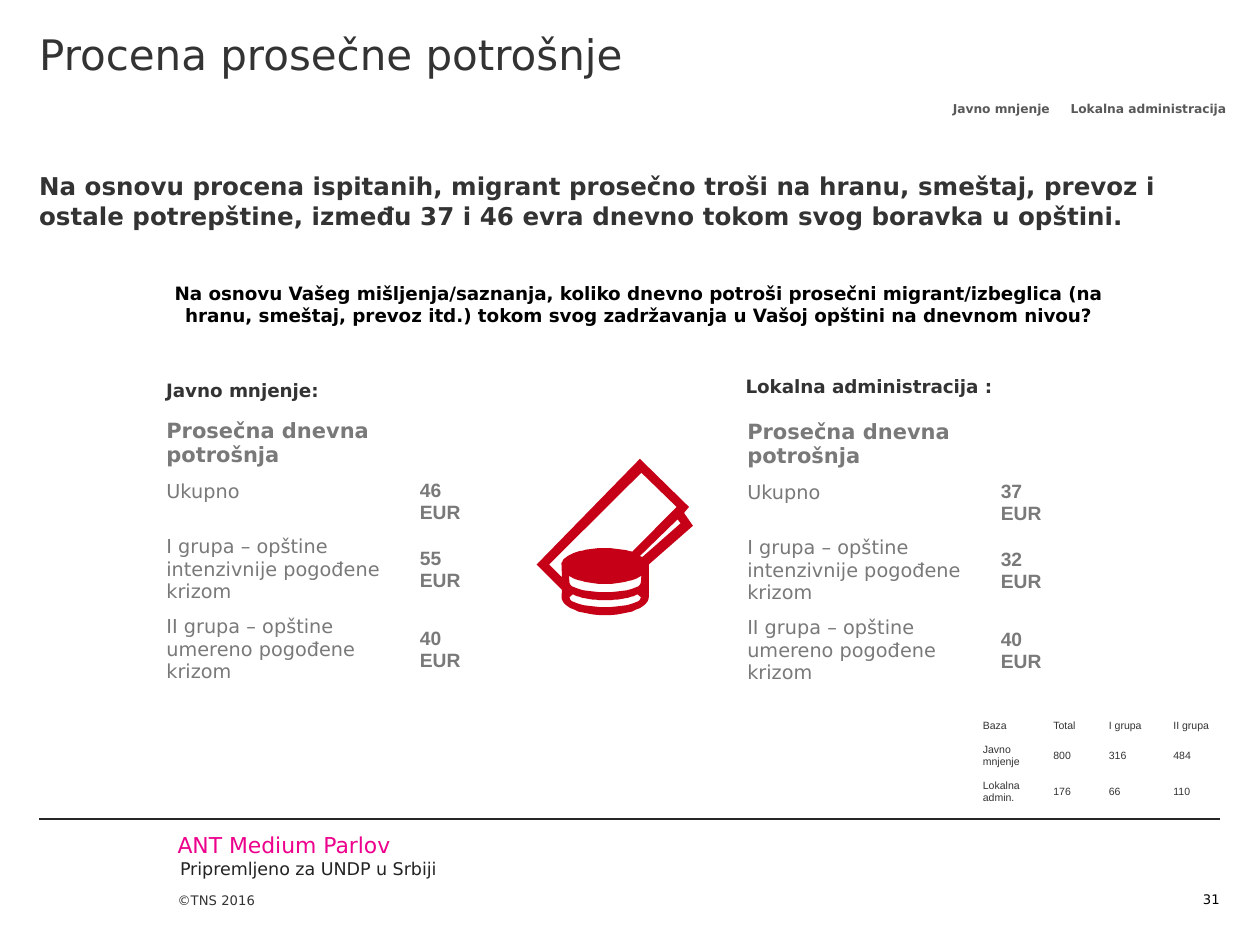
from math import cos, radians, sin

from pptx import Presentation
from pptx.dml.color import RGBColor
from pptx.enum.shapes import MSO_CONNECTOR
from pptx.enum.text import MSO_ANCHOR, MSO_AUTO_SIZE, PP_ALIGN
from pptx.oxml.ns import qn
from pptx.util import Cm, Pt

LEFT, CENTER, RIGHT = PP_ALIGN.LEFT, PP_ALIGN.CENTER, PP_ALIGN.RIGHT
TOP, MIDDLE, BOTTOM = MSO_ANCHOR.TOP, MSO_ANCHOR.MIDDLE, MSO_ANCHOR.BOTTOM
SANS, ARIAL = "DejaVu Sans", "Arial"
DARK, GREY, RED = "333333", "797979", "C50017"

# Insets: left, top, right, bottom in cm
PADDED = (0.25, 0.13, 0.25, 0.13)
FLUSH = (0, 0, 0, 0)
HEADER = (0, 0.58, 0, 0)

TITLE = ("Procena prosečne potrošnje", (0.79, 0, 23.8, 2.87),
         dict(size=24, color=DARK), dict(insets=HEADER))

# Text, box in cm, font, layout
TEXTS = [
    ("Na osnovu procena ispitanih, migrant prosečno troši na hranu, smeštaj, prevoz i "
     "ostale potrepštine, između 37 i 46 evra dnevno tokom svog boravka u opštini.",
     (0.79, 2.87, 23.8, 2.11), dict(size=14, color=DARK, bold=True), dict(insets=HEADER)),
    ("Na osnovu Vašeg mišljenja/saznanja, koliko dnevno potroši prosečni migrant/izbeglica "
     "(na hranu, smeštaj, prevoz itd.) tokom svog zadržavanja u Vašoj opštini na dnevnom nivou?",
     (2.62, 5.56, 20.52, 1.14), dict(size=10.5, color="000000", bold=True), dict(align=CENTER)),
    ("Javno mnjenje:", (3.1, 7.52, 4.62, 0.71),
     dict(size=10.5, color=DARK, bold=True), dict(anchor=MIDDLE)),
    ("Lokalna administracija :", (14.78, 7.44, 6.27, 0.71),
     dict(size=10.5, color=DARK, bold=True), dict(anchor=MIDDLE)),
    ("Javno mnjenje", (18.9, 1.91, 2.57, 0.56),
     dict(size=7, color="595959", bold=True), dict(align=CENTER, wrap=False)),
    ("Lokalna administracija", (21.31, 1.91, 3.68, 0.56),
     dict(size=7, color="595959", bold=True), dict(align=CENTER, wrap=False)),
    ("ANT Medium Parlov", (3.58, 16.76, 8.41, 0.53),
     dict(size=12.5, color="EC008C"), dict(insets=FLUSH)),
    ("Pripremljeno za UNDP u Srbiji", (3.63, 17.3, 17.3, 0.45),
     dict(size=10, color="232323"), dict(insets=FLUSH)),
    ("©TNS 2016", (3.58, 17.58, 2.11, 1.47),
     dict(size=7.5, color=DARK), dict(insets=(0, 0, 0, 0.74), anchor=BOTTOM)),
    ("31", (23.19, 17.58, 1.4, 0.71),
     dict(size=7.5, color="000000"), dict(insets=FLUSH, anchor=BOTTOM, align=RIGHT)),
]

SPENDING_TITLE = "Prosečna dnevna potrošnja"
SPENDING_GROUPS = ["Ukupno", "I grupa – opštine intenzivnije pogođene krizom",
                   "II grupa – opštine umereno pogođene krizom"]
SPENDING = [
    ((3.1, 8.31), ["46 EUR", "55 EUR", "40 EUR"]),
    ((14.81, 8.33), ["37 EUR", "32\nEUR", "40 EUR"]),
]
SPENDING_COLS, SPENDING_ROWS = [5.11, 1.78], [0.89, 1.04, 1.04, 1.04]

BASE = [
    ["Baza", "Total", "I grupa", "II grupa"],
    ["Javno mnjenje", "800", "316", "484"],
    ["Lokalna admin.", "176", "66", "110"],
]
BASE_AT, BASE_COLS, BASE_ROWS = (19.56, 14.38), [1.42, 1.12, 1.3, 1.42], [0.46, 0.66, 0.56]

FOOTER_LINE = (0.79, 16.51, 24.59)
MONEY_AT = (10.82, 9.25)


def rgb(value):
    return RGBColor.from_string(value)


def write(tf, text, size, color, bold=False, font=SANS, align=LEFT):
    for i, line in enumerate(text.split("\n")):
        p = tf.paragraphs[0] if i == 0 else tf.add_paragraph()
        p.alignment = align
        r = p.add_run()
        r.text = line
        for name, value in dict(name=font, size=Pt(size), bold=bold).items():
            setattr(r.font, name, value)
        r.font.color.rgb = rgb(color)


def fill_box(sp, text, box, font, insets=PADDED, anchor=TOP, align=LEFT, wrap=True):
    sp.left, sp.top, sp.width, sp.height = map(Cm, box)
    tf = sp.text_frame
    sides = ("margin_left", "margin_top", "margin_right", "margin_bottom")
    settings = dict(zip(sides, map(Cm, insets)), vertical_anchor=anchor,
                    word_wrap=wrap, auto_size=MSO_AUTO_SIZE.NONE)
    for name, value in settings.items():
        setattr(tf, name, value)
    write(tf, text, align=align, **font)


def add_plain_table(slide, at, cols, rows):
    """Add a table without banding or cell fills."""
    size = (sum(cols), sum(rows))
    table = slide.shapes.add_table(len(rows), len(cols), *map(Cm, at + size)).table
    table.first_row = table.horz_banding = False
    for col, width in zip(table.columns, cols):
        col.width = Cm(width)
    for row, height in zip(table.rows, rows):
        row.height = Cm(height)
    for cell in table.iter_cells():
        cell.fill.background()
    return table


def write_cell(cell, text, anchor=TOP, **font):
    cell.vertical_anchor = anchor
    write(cell.text_frame, text, **font)


def add_spending(slide, at, amounts):
    table = add_plain_table(slide, at, SPENDING_COLS, SPENDING_ROWS)
    table.cell(0, 0).merge(table.cell(0, 1))
    write_cell(table.cell(0, 0), SPENDING_TITLE, size=12, color=GREY, bold=True)
    for i, (group, amount) in enumerate(zip(SPENDING_GROUPS, amounts), 1):
        write_cell(table.cell(i, 0), group, size=11, color=GREY)
        write_cell(table.cell(i, 1), amount, MIDDLE, size=11, color=GREY, bold=True, font=ARIAL)


def arc(y, rx, ry, start, end, steps=24):
    """Points on an ellipse centred on the coin axis; angles run clockwise."""
    angles = [radians(start + (end - start) * i / steps) for i in range(steps + 1)]
    return [(round(138 + rx * cos(a)), round(y + ry * sin(a))) for a in angles]


def add_money(slide):
    """Banknotes and coins, in hundredths of a cm."""
    outline = [(297, 109), (307, 97), (208, 0), (0, 213), (51, 264),
               *arc(279, 88, 36, 180, 0), (226, 213), (315, 135)]
    front_note = [(51, 239), (25, 213), (211, 28), (282, 97), *arc(213, 88, 33, -51, -180)]
    lower_coin = arc(279, 72, 20, 0, 180) + arc(249, 88, 36, 138, 42)
    upper_coin = arc(249, 72, 20, 0, 180) + arc(216, 88, 36, 146, 34)
    back_note = [(213, 198), (208, 196), (284, 122), (290, 130)]
    builder = slide.shapes.build_freeform(*outline[0], scale=Cm(1) / 100)
    builder.add_line_segments(outline[1:])
    for hole in (front_note, lower_coin, upper_coin, back_note):
        builder.move_to(*hole[0])
        builder.add_line_segments(hole[1:])
    sp = builder.convert_to_shape(*map(Cm, MONEY_AT))
    sp.shadow.inherit = False
    sp.fill.solid()
    sp.fill.fore_color.rgb = rgb(RED)
    sp.line.fill.background()


def main():
    prs = Presentation()
    prs.slide_width, prs.slide_height = Cm(25.4), Cm(19.05)
    slide = prs.slides.add_slide(prs.slide_layouts[5])

    text, box, font, layout = TITLE
    fill_box(slide.shapes.title, text, box, font, **layout)
    for text, box, font, layout in TEXTS:
        fill_box(slide.shapes.add_textbox(*map(Cm, box)), text, box, font, **layout)

    x1, y, x2 = FOOTER_LINE
    line = slide.shapes.add_connector(MSO_CONNECTOR.STRAIGHT, *map(Cm, (x1, y, x2, y)))
    line.line.color.rgb = rgb("262626")
    line.line.width = Pt(0.75)
    sp_pr = line._element.spPr
    sp_pr.append(sp_pr.makeelement(qn("a:effectLst"), {}))

    add_money(slide)
    for at, amounts in SPENDING:
        add_spending(slide, at, amounts)

    table = add_plain_table(slide, BASE_AT, BASE_COLS, BASE_ROWS)
    for i, row in enumerate(BASE):
        for j, text in enumerate(row):
            write_cell(table.cell(i, j), text, MIDDLE, size=6, color=DARK, font=ARIAL)

    prs.save("out.pptx")


if __name__ == "__main__":
    main()
